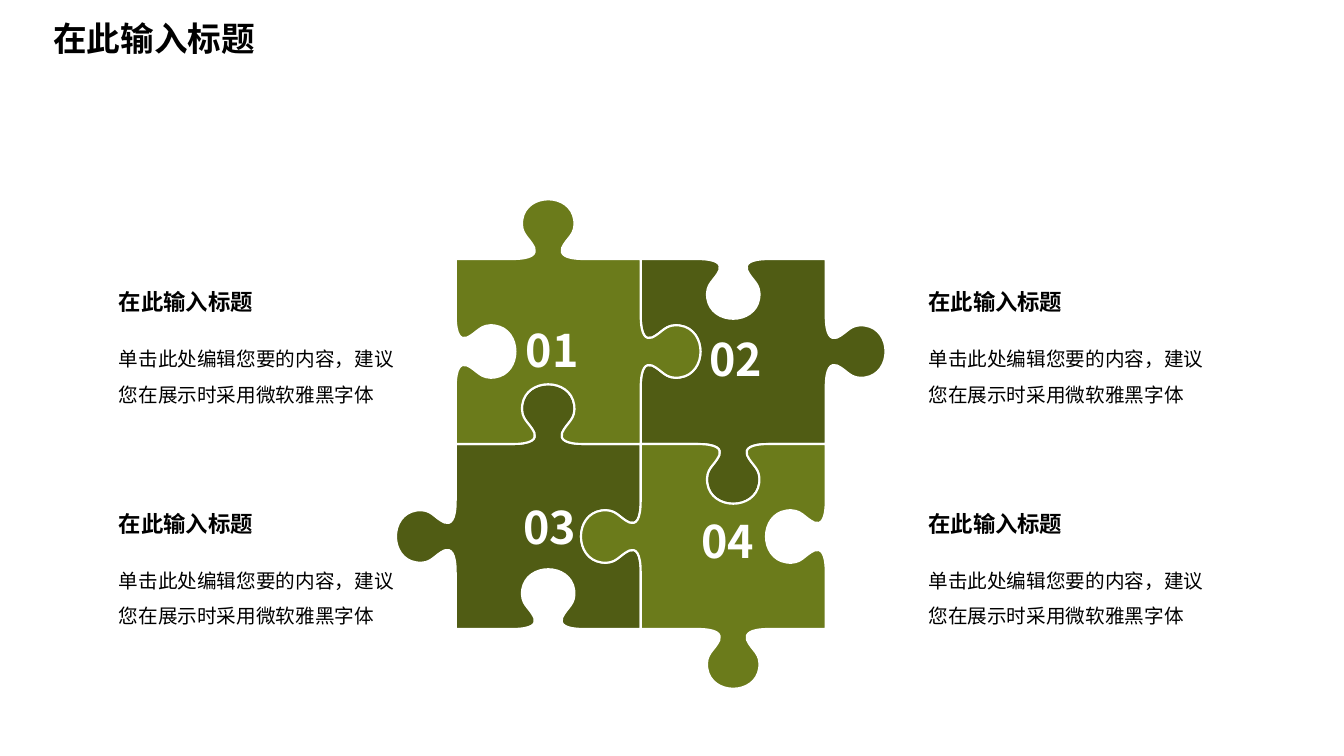
from dataclasses import dataclass

from lxml import etree
from pptx import Presentation
from pptx.dml.color import RGBColor
from pptx.enum import text as t
from pptx.oxml.ns import qn
from pptx.util import Inches, Pt

FONT = "Noto Sans CJK SC"
COLORS = {"dark": "505C14", "light": "6B7B1B", "white": "FFFFFF", "black": "000000"}
HEADING = "在此输入标题"
BODY = "单击此处编辑您要的内容，建议您在展示时采用微软雅黑字体"

PUZZLE_LEFT, PUZZLE_TOP = 4.52, 2.57
SIDE = 3.67 / 2
# First half of a knob: (distance along the side, distance outwards)
HALF_KNOB = [(0.56, 0), (0.76, 0), (0.8, 0.05), (0.78, 0.11),
             (0.73, 0.22), (0.64, 0.24), (0.66, 0.39), (0.7, 0.66)]
KNOB = HALF_KNOB + [(SIDE - along, out) for along, out in reversed(HALF_KNOB)]
CLOCKWISE = [(1, 0), (0, 1), (-1, 0), (0, -1)]


@dataclass
class Piece:
    number: str
    column: int
    row: int
    color: str
    knobs: tuple[int, int, int, int]  # top, right, bottom, left: 1 out, -1 in
    number_left: float
    number_top: float


@dataclass
class Note:
    left: float
    top: float
    body_width: float


PIECES = [
    Piece("03", 0, 1, "dark", (1, -1, -1, 1), 5.18, 4.95),
    Piece("02", 1, 0, "dark", (-1, 1, 1, -1), 7.02, 3.28),
    Piece("01", 0, 0, "light", (1, 1, -1, -1), 5.2, 3.19),
    Piece("04", 1, 1, "light", (-1, -1, 1, 1), 6.94, 5.09),
]
NOTES = [Note(left, top, width)
         for left, width in ((1.08, 2.93), (9.11, 2.99)) for top in (2.81, 5.01)]


def rgb(name: str) -> RGBColor:
    return RGBColor.from_string(COLORS[name])


def curve_knobs(outline) -> None:
    """Turn the line points of each knob into cubic curves, three points to a curve."""
    lines = list(outline.iter(qn("a:lnTo")))
    per_side = len(KNOB) + 1
    for side in range(len(CLOCKWISE)):
        first = side * per_side + 1
        for start in range(first, first + len(KNOB) - 1, 3):
            curve = etree.Element(qn("a:cubicBezTo"))
            lines[start].addprevious(curve)
            for line in lines[start:start + 3]:
                curve.append(line[0])
                line.getparent().remove(line)


def draw_piece(shapes, piece: Piece) -> None:
    x = PUZZLE_LEFT + piece.column * SIDE
    y = PUZZLE_TOP + piece.row * SIDE
    builder = shapes.build_freeform(Inches(x), Inches(y))
    points = []
    for (dx, dy), knob in zip(CLOCKWISE, piece.knobs):
        for along, out in KNOB + [(SIDE, 0)]:
            points.append((Inches(x + dx * along + dy * out * knob),
                           Inches(y + dy * along - dx * out * knob)))
        x, y = x + dx * SIDE, y + dy * SIDE
    builder.add_line_segments(points, close=True)
    shape = builder.convert_to_shape()
    curve_knobs(shape.element)
    shape.shadow.inherit = False
    shape.fill.solid()
    shape.fill.fore_color.rgb = rgb(piece.color)
    shape.line.color.rgb = rgb("white")
    shape.line.width = Pt(1.5)


def add_text(shapes, content: str, left: float, top: float, width: float, height: float,
             size: int, bold: bool = True, color: str = "black"):
    box = shapes.add_textbox(Inches(left), Inches(top), Inches(width), Inches(height))
    frame = box.text_frame
    frame.word_wrap = True
    frame.auto_size = t.MSO_AUTO_SIZE.SHAPE_TO_FIT_TEXT
    paragraph = frame.paragraphs[0]
    paragraph.text = content
    font = paragraph.font
    font.size, font.bold, font.name = Pt(size), bold, FONT
    font.color.rgb = rgb(color)
    defaults = paragraph._p.pPr.find(qn("a:defRPr"))
    etree.SubElement(defaults, qn("a:ea"), typeface=FONT)
    return frame


def draw_number(shapes, piece: Piece) -> None:
    frame = add_text(shapes, piece.number, piece.number_left, piece.number_top,
                     0.55, 0.54, 32, color="white")
    frame.word_wrap = False
    frame.vertical_anchor = t.MSO_ANCHOR.BOTTOM
    frame.margin_left = frame.margin_right = frame.margin_top = frame.margin_bottom = 0
    frame.paragraphs[0].alignment = t.PP_ALIGN.CENTER


def draw_note(shapes, note: Note) -> None:
    add_text(shapes, HEADING, note.left, note.top, 3.14, 0.59, 16)
    body = add_text(shapes, BODY, note.left, note.top + 0.47, note.body_width, 0.77,
                    14, bold=False)
    body.paragraphs[0].line_spacing = 1.5


def main() -> None:
    deck = Presentation()
    deck.slide_width, deck.slide_height = Inches(13.33), Inches(7.5)
    shapes = deck.slides.add_slide(deck.slide_layouts[6]).shapes
    for piece in PIECES:
        draw_piece(shapes, piece)
    for piece in PIECES:
        draw_number(shapes, piece)
    for note in NOTES:
        draw_note(shapes, note)
    add_text(shapes, HEADING, 0.43, 0.13, 2.61, 0.5, 24)
    deck.save("out.pptx")


if __name__ == "__main__":
    main()
